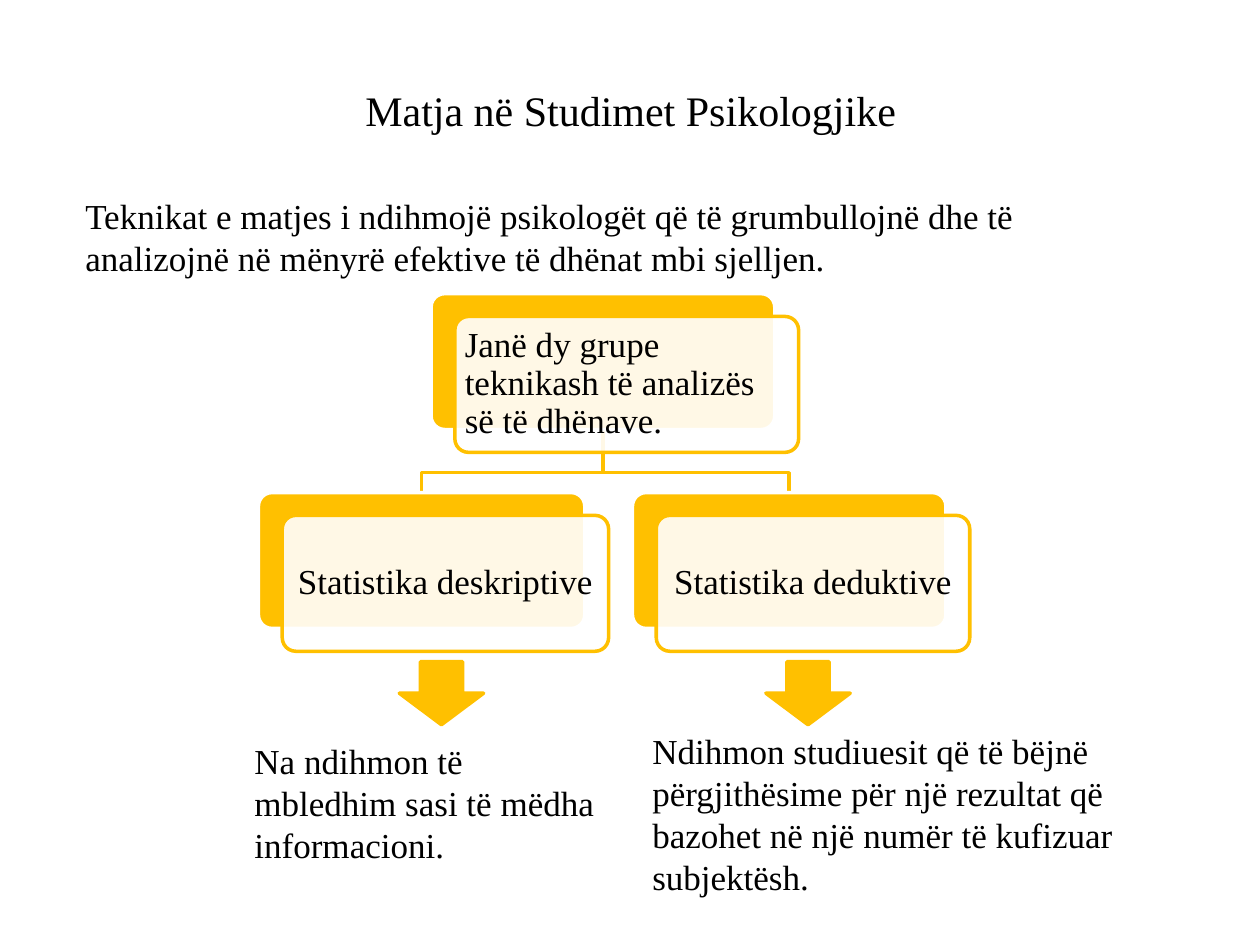
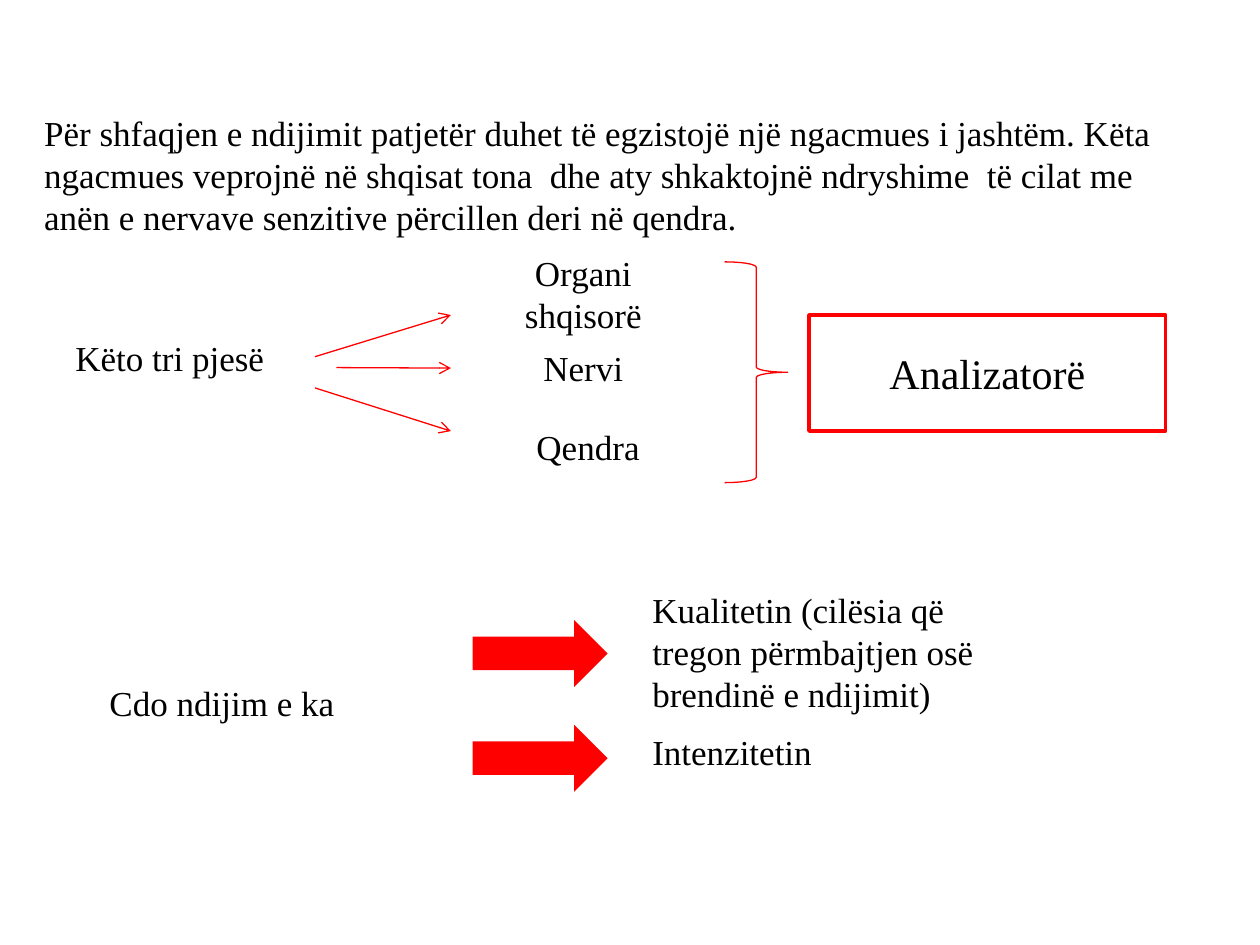
from dataclasses import dataclass
from typing import NamedTuple

from lxml.etree import SubElement
from pptx import Presentation
from pptx.dml.color import RGBColor
from pptx.enum.shapes import MSO_CONNECTOR as Link, MSO_SHAPE as Preset
from pptx.enum.text import MSO_ANCHOR as Anchor, MSO_AUTO_SIZE as AutoSize, PP_ALIGN as Align
from pptx.oxml.ns import qn
from pptx.util import Cm, Pt

GOLD, RED, WHITE, BLACK = "FFC000", "FF0000", "FFFFFF", "000000"
FONT = "Times New Roman"
BODY_SIZE, TITLE_SIZE = 20, 24
CARD_HEIGHT, CARD_SHIFT_X, CARD_SHIFT_Y = 2.74, 0.48, 0.46
BRANCH_Y = 9.53
FRAME_FORMAT = {"word_wrap": True, "auto_size": AutoSize.NONE, "vertical_anchor": Anchor.MIDDLE}
CARD_INSETS = {f"margin_{side}": Cm(0.12) for side in ("left", "top", "right", "bottom")}


class Area(NamedTuple):
    """A rectangle in centimetres."""
    left: float
    top: float
    width: float
    height: float

    def lengths(self) -> list:
        """Return the four values as lengths."""
        return [Cm(value) for value in self]


@dataclass
class Label:
    """A block of text and its place."""
    text: str
    area: Area
    align: Align = Align.LEFT


@dataclass
class Card:
    """A layered card of the hierarchy."""
    text: str
    left: float
    top: float
    width: float
    align: Align = Align.CENTER

    @property
    def middle(self) -> float:
        """Return the horizontal centre of the back layer."""
        return self.left + self.width / 2


class Arrow(NamedTuple):
    """The two ends of a thin arrow in centimetres."""
    start_x: float
    start_y: float
    end_x: float
    end_y: float


def colour(code: str) -> RGBColor:
    """Turn a hex string into a colour."""
    return RGBColor.from_string(code)


def apply(target, values: dict) -> None:
    """Set each named attribute on the target."""
    for name, value in values.items():
        setattr(target, name, value)


def write(shape, text: str, align: Align, size: int = BODY_SIZE) -> None:
    """Put formatted text into a shape."""
    apply(shape.text_frame, FRAME_FORMAT)
    para = shape.text_frame.paragraphs[0]
    para.alignment = align
    span = para.add_run()
    span.text = text
    apply(span.font, {"name": FONT, "size": Pt(size), "bold": False})
    span.font.color.rgb = colour(BLACK)


def paint(shape, fill: str | None, line: str | None, width: float = 2) -> None:
    """Set the fill and the outline, with None for neither."""
    shape.shadow.inherit = False
    if fill:
        shape.fill.solid()
        shape.fill.fore_color.rgb = colour(fill)
    else:
        shape.fill.background()
    if line:
        shape.line.color.rgb = colour(line)
        shape.line.width = Pt(width)
    else:
        shape.line.fill.background()


def add_preset(page, kind: Preset, area: Area, fill: str | None, line: str | None, width: float = 2):
    """Draw a preset shape."""
    shape = page.shapes.add_shape(kind, *area.lengths())
    paint(shape, fill, line, width)
    return shape


def add_label(page, label: Label) -> None:
    """Draw a text box."""
    box = page.shapes.add_textbox(*label.area.lengths())
    write(box, label.text, label.align)


def add_card(page, card: Card) -> None:
    """Draw a gold card with a translucent text layer on it."""
    back = Area(card.left, card.top, card.width, CARD_HEIGHT)
    front = back._replace(left=card.left + CARD_SHIFT_X, top=card.top + CARD_SHIFT_Y)
    for area, fill, line in ((back, GOLD, WHITE), (front, WHITE, GOLD)):
        layer = add_preset(page, Preset.ROUNDED_RECTANGLE, area, fill, line)
        layer.adjustments[0] = 0.1
    tint = layer.fill._xPr.find(qn("a:solidFill"))[0]
    SubElement(tint, qn("a:alpha"), val="90000")
    write(layer, card.text, card.align)
    layer.text_frame.paragraphs[0].line_spacing = 0.9
    apply(layer.text_frame, CARD_INSETS)


def add_branch(page, parent: Card, child: Card) -> None:
    """Draw the angled line from a card to the one below."""
    corners = [(parent.middle, BRANCH_Y), (child.middle, BRANCH_Y), (child.middle, child.top)]
    builder = page.shapes.build_freeform(Cm(parent.middle), Cm(parent.top + CARD_HEIGHT))
    builder.add_line_segments([(Cm(x), Cm(y)) for x, y in corners], close=False)
    paint(builder.convert_to_shape(), None, GOLD)


def add_arrow(page, arrow: Arrow) -> None:
    """Draw a thin red arrow."""
    link = page.shapes.add_connector(Link.STRAIGHT, *(Cm(value) for value in arrow))
    link.line.color.rgb = colour(RED)
    link.line.width = Pt(0.75)
    SubElement(link.line._get_or_add_ln(), qn("a:tailEnd"), type="arrow")
    SubElement(link._element.spPr, qn("a:effectLst"))


def build_measurement(deck) -> None:
    """Build the slide on measurement and its two groups of techniques."""
    page = deck.slides.add_slide(deck.slide_layouts[5])
    title = page.shapes.title
    apply(title, dict(zip(Area._fields, Area(1.07, 0.84, 23.29, 2.74).lengths())))
    write(title, "Matja në Studimet Psikologjike", Align.CENTER, TITLE_SIZE)

    root = Card("Janë dy grupe teknikash të analizës së të dhënave.", 8.69, 5.92, 6.93, Align.LEFT)
    children = [
        Card("Statistika deskriptive", 5.21, 9.93, 6.58),
        Card("Statistika deduktive", 12.75, 9.93, 6.32),
    ]
    for child in reversed(children):
        add_branch(page, root, child)
    for card in (root, *children):
        add_card(page, card)
    for left in (8.05, 15.44):
        add_preset(page, Preset.DOWN_ARROW, Area(left, 13.34, 1.7, 1.27), GOLD, GOLD)
    labels = [
        Label("Teknikat e matjes i ndihmojë psikologët që të grumbullojnë dhe të analizojnë "
              "në mënyrë efektive të dhënat mbi sjelljen.", Area(1.47, 3.81, 21.16, 1.91)),
        Label("Na ndihmon të mbledhim sasi të mëdha informacioni.", Area(4.88, 14.81, 7.42, 2.74)),
        Label("Ndihmon studiuesit që të bëjnë përgjithësime për një rezultat që bazohet "
              "në një numër të kufizuar subjektësh.", Area(12.9, 14.81, 10.8, 3.18)),
    ]
    for label in labels:
        add_label(page, label)


def build_sensation(deck) -> None:
    """Build the slide on sensation and its parts."""
    page = deck.slides.add_slide(deck.slide_layouts[6])
    labels = [
        Label("Për shfaqjen e ndijimit patjetër duhet të egzistojë një ngacmues i jashtëm. "
              "Këta ngacmues veprojnë në shqisat tona  dhe aty shkaktojnë ndryshime  të cilat "
              "me anën e nervave senzitive përcillen deri në qendra.",
              Area(0.64, 2.34, 23.93, 2.34)),
        Label("Këto tri pjesë", Area(1.27, 5.72, 5.08, 2.97)),
        Label("Organi shqisorë", Area(9.32, 5.28, 4.88, 1.27), Align.CENTER),
        Label("Nervi", Area(9.32, 6.99, 4.88, 0.84), Align.CENTER),
        Label("Qendra", Area(9.53, 8.26, 4.65, 1.47), Align.CENTER),
        Label("Cdo ndijim e ka", Area(0.98, 12.9, 6.99, 2.54), Align.CENTER),
        Label("Kualitetin (cilësia që tregon përmbajtjen osë brendinë e ndijimit)",
              Area(12.9, 12.07, 8.05, 2.11)),
        Label("Intenzitetin", Area(12.9, 14.61, 7.19, 1.07)),
    ]
    for label in labels:
        add_label(page, label)
    arrows = [
        Arrow(6.35, 7.19, 9.09, 6.35),
        Arrow(6.78, 7.41, 9.09, 7.42),
        Arrow(6.35, 7.82, 9.09, 8.69),
    ]
    for arrow in arrows:
        add_arrow(page, arrow)
    add_preset(page, Preset.RIGHT_BRACE, Area(14.61, 5.28, 1.27, 4.45), None, RED, 0.75)
    analyser = add_preset(page, Preset.RECTANGLE, Area(16.31, 6.35, 7.19, 2.34), None, RED)
    write(analyser, "Analizatorë", Align.CENTER, TITLE_SIZE)
    for top in (12.5, 14.61):
        add_preset(page, Preset.RIGHT_ARROW, Area(9.53, top, 2.72, 1.35), RED, None)


def main() -> None:
    """Build and save the deck."""
    deck = Presentation()
    deck.slide_width, deck.slide_height = Cm(25.4), Cm(19.05)
    build_measurement(deck)
    build_sensation(deck)
    deck.save("out.pptx")


if __name__ == "__main__":
    main()
